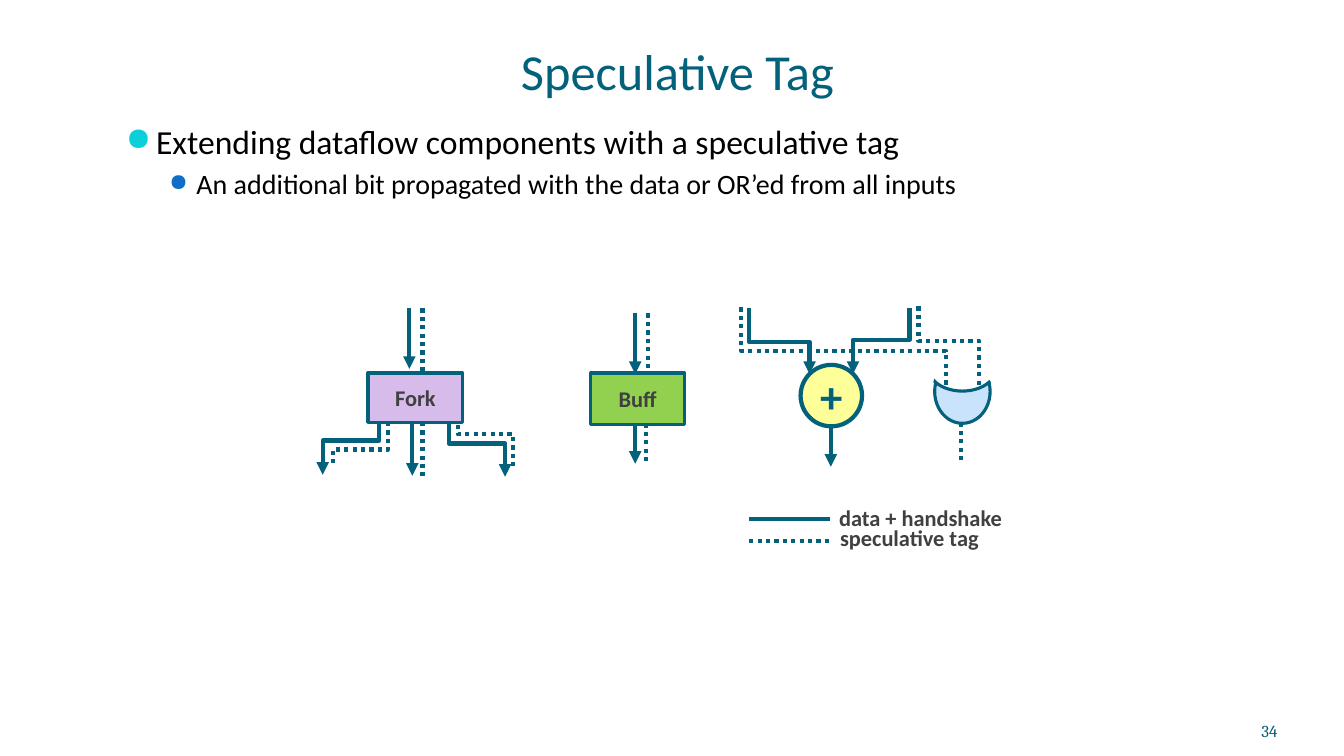
"""Build the slide on speculative tags in dataflow components."""
import lxml.etree
import pptx
import pptx.dml.color
import pptx.enum.dml
import pptx.enum.shapes
import pptx.enum.text
import pptx.oxml.ns
import pptx.util

Inches = pptx.util.Inches
Pt = pptx.util.Pt
qn = pptx.oxml.ns.qn
hex_color = pptx.dml.color.RGBColor.from_string
SHAPE = pptx.enum.shapes.MSO_SHAPE
CONNECTOR = pptx.enum.shapes.MSO_CONNECTOR
ANCHOR = pptx.enum.text.MSO_ANCHOR
ALIGN = pptx.enum.text.PP_ALIGN
TEAL, GRAY, BLACK, WHITE = "04617B", "404040", "000000", "FFFFFF"

deck = pptx.Presentation()
deck.slide_width, deck.slide_height = Inches(13.33), Inches(7.5)
slide = deck.slides.add_slide(deck.slide_layouts[6])


def write(paragraph, text, size, color, align=ALIGN.CENTER, bold=False, font="Calibri"):
    paragraph.alignment = align
    run = paragraph.add_run()
    run.text = text
    run.font.name, run.font.size, run.font.bold = font, Pt(size), bold
    run.font.color.rgb = hex_color(color)


def add_part(kind, left, top, width, height, fill, line, weight):
    part = slide.shapes.add_shape(kind, Inches(left), Inches(top), Inches(width), Inches(height))
    part.shadow.inherit = False
    part.fill.solid()
    part.fill.fore_color.rgb = hex_color(fill)
    part.line.color.rgb = hex_color(line)
    part.line.width = Pt(weight)
    part.text_frame.vertical_anchor = ANCHOR.MIDDLE
    return part.text_frame.paragraphs[0]


title = slide.shapes.add_textbox(Inches(1.82), Inches(-0.25), Inches(9.8), Inches(1.25)).text_frame
title.word_wrap = True
title.vertical_anchor = ANCHOR.BOTTOM
title.margin_left = title.margin_right = title.margin_bottom = 0
write(title.paragraphs[0], "Speculative Tag", 36, TEAL)

body = slide.shapes.add_textbox(Inches(1.15), Inches(1.15), Inches(10.43), Inches(2.6)).text_frame
body.word_wrap = True
body.add_paragraph()
points = [
    ("Extending dataflow components with a speculative tag", 24, 0.3, 0.3, "0BD0D9", 95),
    ("An additional bit propagated with the data or OR’ed from all inputs", 20, 0.7, 0.27, "0F6FC6", 85),
]
for level, (text, size, indent, hanging, bullet_color, bullet_size) in enumerate(points):
    point = body.paragraphs[level]
    point.level = level
    point.space_before = Pt(size * 0.2)
    write(point, text, size, BLACK, ALIGN.LEFT)
    settings = point._p.get_or_add_pPr()
    settings.set("marL", str(Inches(indent)))
    settings.set("indent", str(-Inches(hanging)))
    tint = lxml.etree.SubElement(settings, qn("a:buClr"))
    lxml.etree.SubElement(tint, qn("a:srgbClr"), val=bullet_color)
    lxml.etree.SubElement(settings, qn("a:buSzPct"), val=str(bullet_size * 1000))
    lxml.etree.SubElement(settings, qn("a:buChar"), char="●")

page = slide.shapes.add_textbox(Inches(11.56), Inches(6.95), Inches(1.11), Inches(0.4)).text_frame
page.word_wrap = True
page.vertical_anchor = ANCHOR.BOTTOM
page.margin_left = page.margin_top = page.margin_right = page.margin_bottom = 0
write(page.paragraphs[0], "34", 12, "045D75", ALIGN.RIGHT, font="Cambria")

for text, left, top, width in [("data + handshake", 7.98, 4.95, 2.3), ("speculative tag", 8.04, 5.15, 1.96)]:
    label = slide.shapes.add_textbox(Inches(left), Inches(top), Inches(width), Inches(0.37)).text_frame
    label.word_wrap = True
    write(label.paragraphs[0], text, 16, GRAY, bold=True)

adder = add_part(SHAPE.OVAL, 7.94, 3.62, 0.61, 0.61, "FFFF99", TEAL, 3)
write(adder, "+", 32, TEAL, bold=True)

or_gate = [
    (9.27, 3.57, 0.55, 0.63, "C8E3FB", TEAL),
    (9.21, 3.43, 0.67, 0.45, WHITE, TEAL),
    (8.6, 3.51, 0.65, 0.45, WHITE, WHITE),
    (9.81, 3.47, 0.8, 0.45, WHITE, WHITE),
    (9.11, 3.24, 0.8, 0.45, WHITE, WHITE),
]
for curve in or_gate:
    add_part(SHAPE.OVAL, *curve, 2.25)

straight_wires = [
    (7.43, 5.15, 8.23, 5.15, "plain"),
    (7.43, 5.37, 8.23, 5.37, "tag"),
    (4.06, 3.06, 4.06, 3.66, "data"),
    (4.19, 3.06, 4.19, 3.76, "tag"),
    (4.09, 4.12, 4.09, 4.72, "data"),
    (4.19, 4.02, 4.19, 4.72, "tag"),
    (6.3, 3.11, 6.3, 3.71, "data"),
    (6.43, 3.11, 6.43, 3.81, "tag"),
    (6.3, 4.21, 6.3, 4.6, "data"),
    (6.41, 4.2, 6.41, 4.61, "tag"),
    (8.24, 4.24, 8.24, 4.63, "data"),
    (9.53, 4.19, 9.53, 4.58, "tag"),
]
bent_wires = [
    (3.76, 4.06, 3.2, 4.71, "data", 4.37),
    (3.85, 4.02, 3.3, 4.62, "tag", 4.46),
    (4.45, 4.09, 5.01, 4.73, "data", 4.4),
    (4.54, 4.05, 5.09, 4.65, "tag", 4.31),
    (7.43, 3.06, 8.03, 3.71, "data", 3.39),
    (7.35, 3.05, 9.38, 3.85, "tag", 3.48),
    (9.02, 3.06, 8.46, 3.71, "data", 3.37),
    (9.11, 3.04, 9.71, 3.84, "tag", 3.38),
]
for x1, y1, x2, y2, role, *turn in straight_wires + bent_wires:
    if turn:
        mid_x, mid_y = (x1 + x2) / 2, (y1 + y2) / 2
        run, drop = (x2 - x1) / 2, (y2 - y1) / 2
        wire = slide.shapes.add_connector(
            CONNECTOR.ELBOW, Inches(mid_x - drop), Inches(mid_y + run), Inches(mid_x + drop), Inches(mid_y - run))
        outline = wire.element.spPr
        outline.find(qn("a:xfrm")).set("rot", str(90 * 60000))
        guides = outline.find(qn("a:prstGeom")).find(qn("a:avLst"))
        share = round((turn[0] - y1) / (y2 - y1) * 100000)
        lxml.etree.SubElement(guides, qn("a:gd"), name="adj1", fmla=f"val {share}")
    else:
        wire = slide.shapes.add_connector(CONNECTOR.STRAIGHT, Inches(x1), Inches(y1), Inches(x2), Inches(y2))
    wire.line.color.rgb = hex_color(TEAL)
    wire.line.width = Pt(3)
    if role == "tag":
        wire.line.dash_style = pptx.enum.dml.MSO_LINE.ROUND_DOT
    elif role == "data":
        lxml.etree.SubElement(wire.line._get_or_add_ln(), qn("a:tailEnd"), type="triangle")
    lxml.etree.SubElement(wire.element.spPr, qn("a:effectLst"))

for name, left, width, height, fill in [("Fork", 3.65, 0.94, 0.49, "D6BBEB"), ("Buff", 5.86, 0.93, 0.51, "92D050")]:
    component = add_part(SHAPE.RECTANGLE, left, 3.7, width, height, fill, TEAL, 2.25)
    write(component, name, 16, GRAY, bold=True)

deck.save("out.pptx")
